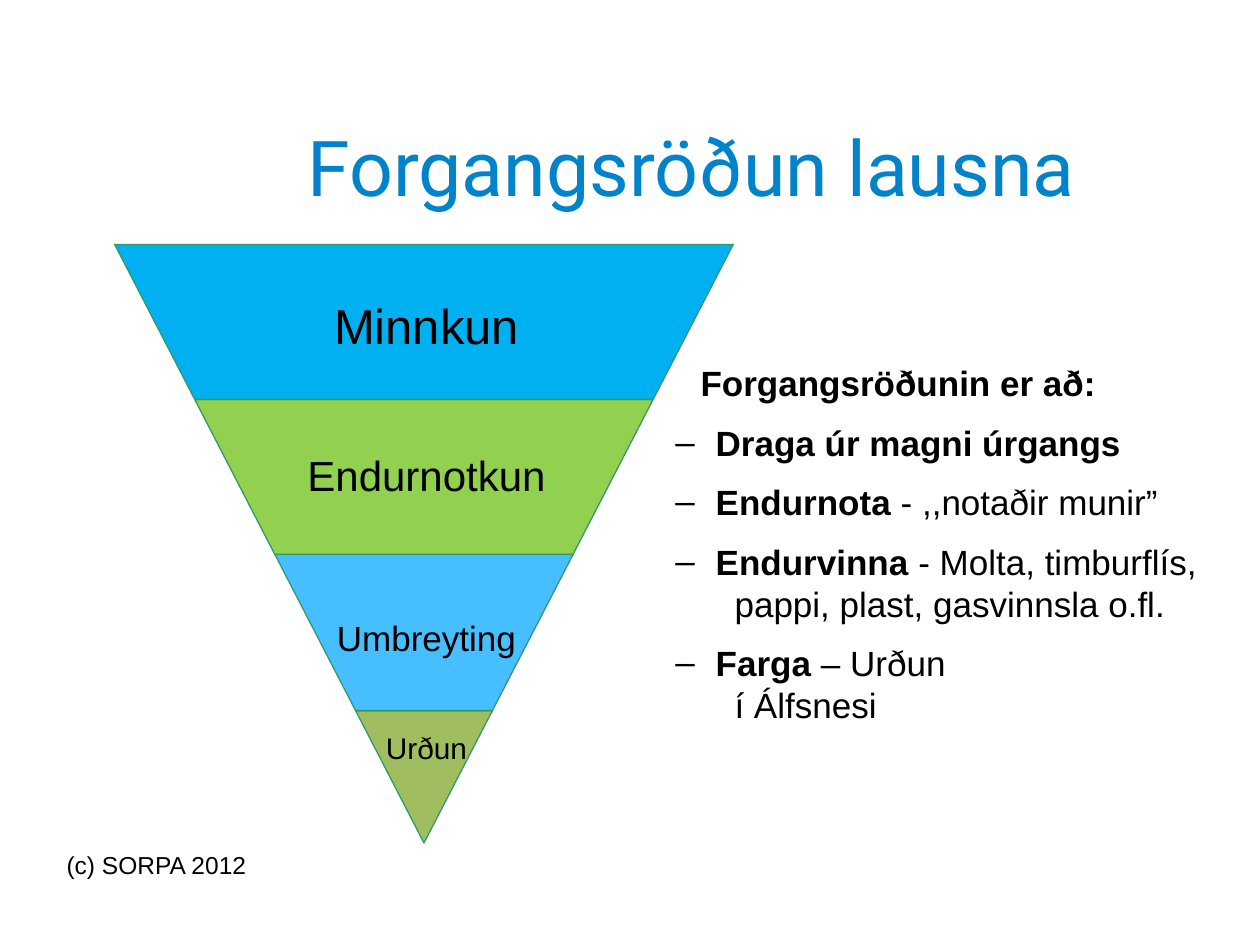
from lxml import etree
from pptx import Presentation
from pptx.dml.color import RGBColor
from pptx.enum.text import MSO_ANCHOR, MSO_AUTO_SIZE, PP_ALIGN
from pptx.oxml.ns import qn
from pptx.util import Inches, Pt

CENTER, LEFT = PP_ALIGN.CENTER, PP_ALIGN.LEFT
TOP, MIDDLE = MSO_ANCHOR.TOP, MSO_ANCHOR.MIDDLE
NO_FIT = MSO_AUTO_SIZE.NONE

FUNNEL_LEFT, FUNNEL_RIGHT = 0.91, 5.82
FUNNEL_TOP, FUNNEL_TIP = 1.94, 6.69
FUNNEL_MID = (FUNNEL_LEFT + FUNNEL_RIGHT) / 2

# top, bottom, fill, label, label top, label size
BANDS = [
    (1.94, 3.17, "00B0F0", "Minnkun", 2.3, 28),
    (3.17, 4.4, "92D050", "Endurnotkun", 3.52, 24),
    (4.4, 5.64, "46BEFF", "Umbreyting", 4.84, 20),
    (5.64, 6.69, "A0BE60", "Urðun", 5.74, 17),
]

# bold text, plain text, margin, bullet, space before
PRIORITIES = [
    ("Forgangsröðunin er að:", "", 0.46, None, 0),
    ("Draga úr magni úrgangs", "", 0.58, "–", 10),
    ("Endurnota", " - ,,notaðir munir”", 0.58, "–", 10),
    ("Endurvinna", " - Molta, timburflís,", 0.58, "–", 10),
    ("", "pappi, plast, gasvinnsla o.fl.", 0.73, None, 0),
    ("Farga", " – Urðun", 0.58, "–", 10),
    ("", "í Álfsnesi", 0.73, None, 0),
]


def rgb(value):
    """Turn a hex string into a colour."""
    return RGBColor.from_string(value)


def set_attrs(obj, values):
    """Set every attribute named in a dict."""
    for name, value in values.items():
        setattr(obj, name, value)


def place(sp, left, top, width, height):
    """Move and size a shape in inches."""
    set_attrs(sp, {"left": Inches(left), "top": Inches(top),
                   "width": Inches(width), "height": Inches(height)})


def add_run(p, text, size, color="000000", font="Arial", bold=False):
    """Append a formatted run to a paragraph."""
    r = p.add_run()
    r.text = text
    set_attrs(r.font, {"name": font, "size": Pt(size), "bold": bold})
    r.font.color.rgb = rgb(color)


def set_bullet(p, margin, char):
    """Set the left margin and the bullet of a paragraph."""
    pPr = p._p.get_or_add_pPr()
    pPr.set("marL", str(Inches(margin)))
    pPr.set("indent", str(Inches(-0.32) if char else 0))
    if char:
        etree.SubElement(pPr, qn("a:buChar")).set("char", char)
    else:
        etree.SubElement(pPr, qn("a:buNone"))


def add_label(s, text, left, top, width, height, size, align=LEFT):
    """Add a one-line text box."""
    sp = s.shapes.add_textbox(*map(Inches, (left, top, width, height)))
    tf = sp.text_frame
    tf.word_wrap = True
    tf.paragraphs[0].alignment = align
    add_run(tf.paragraphs[0], text, size)


def add_title(s):
    """Fill the title placeholder."""
    place(s.shapes.title, 0.99, 0.69, 9, 1.25)
    tf = s.shapes.title.text_frame
    set_attrs(tf, {"vertical_anchor": MIDDLE, "auto_size": NO_FIT})
    tf.paragraphs[0].alignment = CENTER
    add_run(tf.paragraphs[0], "Forgangsröðun lausna", 44, "0083CA", "Roboto")


def funnel_edges(y):
    """Return the left and right edge of the funnel at a height."""
    inset = (FUNNEL_MID - FUNNEL_LEFT) * (y - FUNNEL_TOP) / (FUNNEL_TIP - FUNNEL_TOP)
    return FUNNEL_LEFT + inset, FUNNEL_RIGHT - inset


def add_band(group, top, bottom, fill):
    """Draw one slice of the funnel."""
    (x1, x2), (x3, x4) = funnel_edges(top), funnel_edges(bottom)
    corners = [(x2, top), (x4, bottom)]
    if bottom < FUNNEL_TIP:
        corners.append((x3, bottom))
    fb = group.shapes.build_freeform(Inches(x1), Inches(top))
    fb.add_line_segments([(Inches(x), Inches(y)) for x, y in corners], close=True)
    sp = fb.convert_to_shape()
    sp.shadow.inherit = False
    sp.fill.solid()
    sp.fill.fore_color.rgb = rgb(fill)
    sp.line.color.rgb = rgb("339966")
    sp.line.width = Pt(0.75)


def add_funnel(s):
    """Draw the slices from the tip up, then their labels."""
    group = s.shapes.add_group_shape()
    for top, bottom, fill, *_ in reversed(BANDS):
        add_band(group, top, bottom, fill)
    for *_, text, top, size in BANDS:
        add_label(s, text, FUNNEL_MID - 1.77, top, 3.58, size / 50, size, CENTER)


def add_priorities(s):
    """Fill the body placeholder with the ranked list."""
    sp = s.placeholders[1]
    place(sp, 5, 2.82, 4.9, 3.2)
    tf = sp.text_frame
    set_attrs(tf, {"vertical_anchor": TOP, "auto_size": NO_FIT, "word_wrap": True})
    for i, (bold, plain, margin, bullet, before) in enumerate(PRIORITIES):
        p = tf.add_paragraph() if i else tf.paragraphs[0]
        set_bullet(p, margin, bullet)
        set_attrs(p, {"space_before": Pt(before), "line_spacing": Pt(24)})
        if bold:
            add_run(p, bold, 20, bold=True)
        if plain:
            add_run(p, plain, 20)


def main():
    """Build the slide and save it."""
    prs = Presentation()
    prs.slide_width, prs.slide_height = Inches(10), Inches(7.5)
    s = prs.slides.add_slide(prs.slide_layouts[1])
    add_title(s)
    add_label(s, "(c) SORPA 2012", 0.43, 6.7, 3.17, 0.4, 14)
    add_funnel(s)
    add_priorities(s)
    prs.save("out.pptx")


if __name__ == "__main__":
    main()
